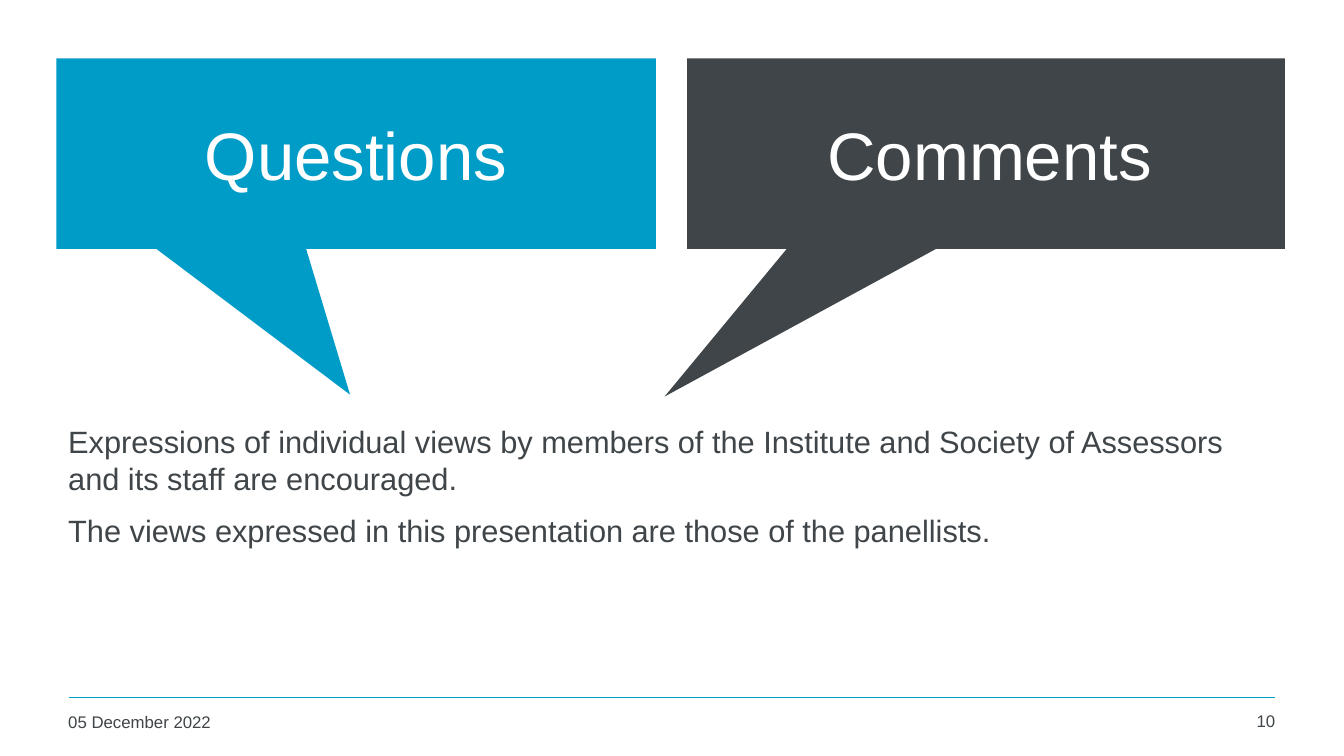
"""Build the closing slide that invites questions and comments."""
from lxml.etree import SubElement
from pptx import Presentation
from pptx.dml.color import RGBColor
from pptx.enum.shapes import MSO_CONNECTOR as Connector, MSO_SHAPE as Preset
from pptx.enum.text import MSO_ANCHOR as Anchor, PP_ALIGN as Align
from pptx.oxml.ns import qn
from pptx.util import Cm, Pt

BUBBLES = [
    {"word": "Questions", "fill": "blue", "area": (1.42, 1.47, 15.11, 4.8),
     "label": (1.42, 1.47, 15.11, 4.8), "tip": (-0.01, 1.266)},
    {"word": "Comments", "fill": "slate", "area": (17.32, 1.47, 15.06, 4.8),
     "label": (17.93, 2.29, 14.02, 3.17), "tip": (-0.538, 1.276)},
]
STATEMENTS = [
    "Expressions of individual views by members of the Institute and "
    "Society of Assessors and its staff are encouraged.",
    "The views expressed in this presentation are those of the panellists.",
]
TEXTS = [
    {"lines": STATEMENTS, "area": (1.47, 10.52, 30.71, 6.68), "size": "body",
     "align": Align.LEFT},
    {"lines": ["05 December 2022"], "area": (1.47, 17.81, 7.47, 0.91),
     "size": "footer", "align": Align.LEFT},
    {"lines": ["10"], "area": (30, 17.78, 2.39, 0.94), "size": "footer",
     "align": Align.RIGHT},
]
FOOTER_RULE = (1.73, 17.58, 32.13, 17.58)
THEME = {
    "font": "Arial",
    "blue": RGBColor.from_string("009CC8"),
    "slate": RGBColor.from_string("3F4548"),
    "white": RGBColor.from_string("FFFFFF"),
    "label": Pt(48),
    "body": Pt(22),
    "footer": Pt(12),
    "rule": Pt(1),
}


def lengths(values):
    return [Cm(value) for value in values]


def apply(target, formats):
    for name, value in formats.items():
        setattr(target, name, value)


def add_text(page, lines, area, size, align, color="slate", anchor=Anchor.TOP):
    frame = page.shapes.add_textbox(*lengths(area)).text_frame
    apply(frame, {"word_wrap": True, "vertical_anchor": anchor})
    for index, line in enumerate(lines):
        para = frame.add_paragraph() if index else frame.paragraphs[0]
        gap = THEME[size] // 2 if index else 0
        apply(para, {"alignment": align, "space_before": gap})
        span = para.add_run()
        span.text = line
        apply(span.font, {"name": THEME["font"], "size": THEME[size]})
        span.font.color.rgb = THEME[color]


def add_bubble(page, bubble):
    box = page.shapes.add_shape(Preset.RECTANGULAR_CALLOUT, *lengths(bubble["area"]))
    box.shadow.inherit = False
    box.fill.solid()
    box.fill.fore_color.rgb = THEME[bubble["fill"]]
    box.line.fill.background()
    for index, value in enumerate(bubble["tip"]):
        box.adjustments[index] = value
    add_text(page, [bubble["word"]], bubble["label"], "label", Align.CENTER,
             "white", Anchor.MIDDLE)


def add_rule(page):
    rule = page.shapes.add_connector(Connector.STRAIGHT, *lengths(FOOTER_RULE))
    rule.line.color.rgb = THEME["blue"]
    rule.line.width = THEME["rule"]
    SubElement(rule._element.spPr, qn("a:effectLst"))


def main():
    deck = Presentation()
    apply(deck, {"slide_width": Cm(33.87), "slide_height": Cm(19.05)})
    page = deck.slides.add_slide(deck.slide_layouts[6])
    add_rule(page)
    for bubble in BUBBLES:
        add_bubble(page, bubble)
    for text in TEXTS:
        add_text(page, **text)
    deck.save("out.pptx")


if __name__ == "__main__":
    main()
